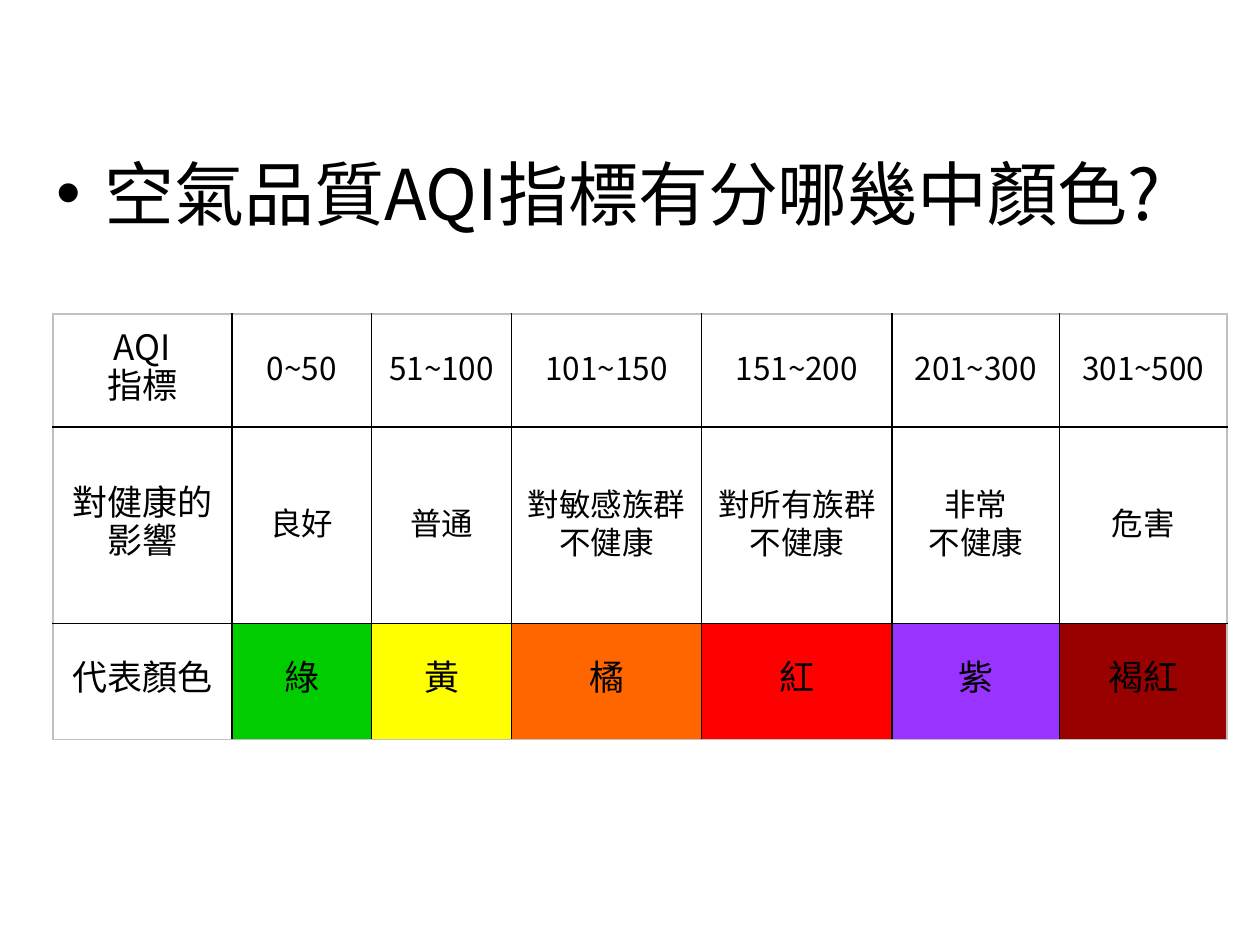
from pptx import Presentation
from pptx.dml.color import RGBColor
from pptx.enum.text import MSO_ANCHOR as Anchor, PP_ALIGN as Align
from pptx.oxml.ns import qn
from pptx.util import Inches, Pt
from lxml.etree import SubElement

SANS, SANS_JP = "Noto Sans CJK SC", "Noto Sans CJK JP"
WIDTH, HEIGHT = 10, 7.5

HEADING = "空氣品質AQI指標有分哪幾中顏色?"
COLUMNS = [1.42, 1.11, 1.11, 1.51, 1.51, 1.33, 1.33]
ROWS = [0.9, 1.56, 0.92]
# "\n" starts a paragraph, "\v" breaks a line
AQI_TABLE = [
    ["AQI\n指標", "0~50", "51~100", "101~150", "151~200", "201~300", "301~500"],
    ["對健康的\n影響", "良好", "普通", "對敏感族群\v不健康", "對所有族群\v不健康",
     "非常\v不健康", "危害"],
    ["代表顏色", "綠", "黃", "橘", "紅", "紫", "褐紅"],
]
LEVEL_COLORS = ["FFFFFF", "00CC00", "FFFF00", "FF6600", "FF0000", "9933FF", "990000"]


def color(value):
    return RGBColor.from_string(value)


class SlideBuilder:
    """Holds the style and the current slide."""
    ink, paper, frame = "000000", "FFFFFF", "C0C0C0"

    def __init__(self, presentation):
        self.slide = presentation.slides.add_slide(presentation.slide_layouts[6])

    def place(self, left, top, width, height):
        """Turn shares of the slide's size into lengths."""
        return (Inches(left * WIDTH), Inches(top * HEIGHT),
                Inches(width * WIDTH), Inches(height * HEIGHT))

    def style_runs(self, paragraph, size, font):
        for run in paragraph.runs:
            run.font.size = Pt(size)
            run.font.name = font
            run.font.color.rgb = color(self.ink)
            SubElement(run.font._element, qn("a:ea")).set("typeface", font)

    def bullet(self, text, box, size):
        frame = self.slide.shapes.add_textbox(*self.place(*box)).text_frame
        frame.word_wrap = True
        frame.text = text
        paragraph = frame.paragraphs[0]
        paragraph.space_before = Pt(size * 0.2)
        self.style_runs(paragraph, size, SANS)
        properties = paragraph._p.get_or_add_pPr()
        indent = Inches(0.38)
        properties.set("marL", str(indent))
        properties.set("indent", str(-indent))
        SubElement(properties, qn("a:buFont")).set("typeface", "Arial")
        SubElement(properties, qn("a:buChar")).set("char", "•")

    def border(self, cell, edges):
        """Draw the cell's edges; edges maps a tag to a colour."""
        properties = cell._tc.get_or_add_tcPr()
        for position, (tag, value) in enumerate(edges.items()):
            line = properties.makeelement(qn(f"a:{tag}"), {"w": str(Pt(1))})
            fill = SubElement(line, qn("a:solidFill"))
            SubElement(fill, qn("a:srgbClr")).set("val", value)
            properties.insert(position, line)

    def cell(self, cell, text, size, font, fill):
        cell.fill.solid()
        cell.fill.fore_color.rgb = color(fill)
        cell.vertical_anchor = Anchor.MIDDLE
        cell.margin_left = cell.margin_right = Inches(0.06)
        cell.margin_top = cell.margin_bottom = 0
        cell.text_frame.text = text
        for paragraph in cell.text_frame.paragraphs:
            paragraph.alignment = Align.CENTER
            paragraph.line_spacing = Pt(22)
            self.style_runs(paragraph, size, font)

    def table(self, rows, left, top, widths, heights, last_row_fills):
        box = self.place(left, top, sum(widths) / WIDTH, sum(heights) / HEIGHT)
        table = self.slide.shapes.add_table(len(heights), len(widths), *box).table
        table.first_row = table.horz_banding = False
        for column, width in zip(table.columns, widths):
            column.width = Inches(width)
        for row, height in zip(table.rows, heights):
            row.height = Inches(height)
        last_row, last_column = len(heights) - 1, len(widths) - 1
        for r, texts in enumerate(rows):
            for c, text in enumerate(texts):
                cell = table.cell(r, c)
                size = 20 if c == 0 or r == last_row else 18
                font = SANS_JP if c == 0 or r == 1 else SANS
                fill = last_row_fills[c] if r == last_row else self.paper
                self.cell(cell, text, size, font, fill)
                # Grey outer frame, black inner lines
                outer = {"lnL": c == 0, "lnR": c == last_column,
                         "lnT": r == 0, "lnB": r == last_row}
                self.border(cell, {tag: self.frame if is_outer else self.ink
                                   for tag, is_outer in outer.items()})


def main():
    presentation = Presentation()
    presentation.slide_width = Inches(WIDTH)
    presentation.slide_height = Inches(HEIGHT)
    builder = SlideBuilder(presentation)

    # Question
    builder.bullet(HEADING, (0.035, 0.153, 0.938, 0.125), 40)
    # AQI levels with their health effect and colour
    builder.table(AQI_TABLE, 0.042, 0.332, COLUMNS, ROWS, LEVEL_COLORS)

    presentation.save("out.pptx")


if __name__ == "__main__":
    main()
